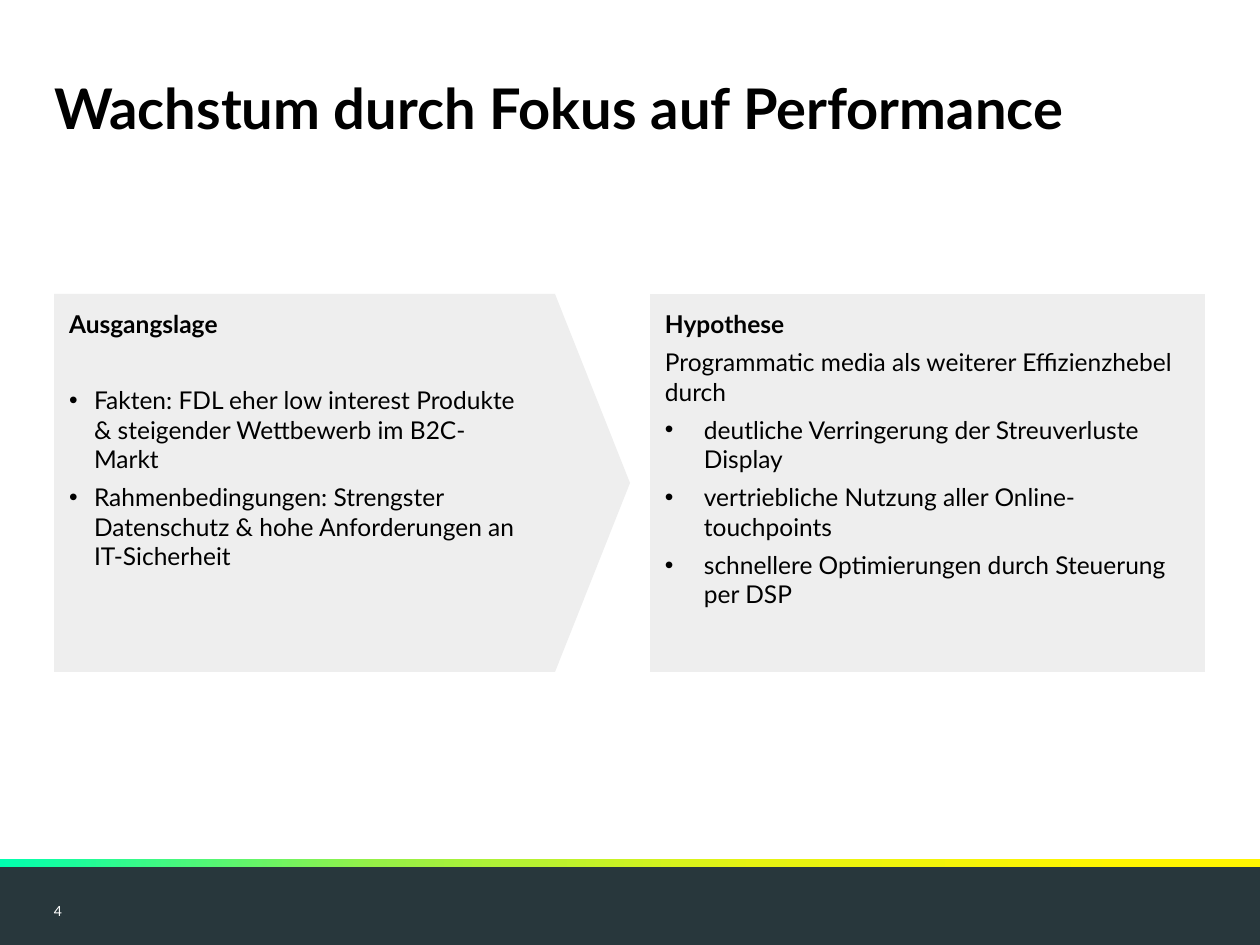
from lxml import etree
from pptx import Presentation
from pptx.dml.color import RGBColor
from pptx.enum.shapes import MSO_SHAPE
from pptx.enum.text import MSO_ANCHOR
from pptx.oxml.ns import qn
from pptx.util import Emu, Pt

RECTANGLE, PROCESS = MSO_SHAPE.RECTANGLE, MSO_SHAPE.FLOWCHART_PROCESS
TOP, MIDDLE = MSO_ANCHOR.TOP, MSO_ANCHOR.MIDDLE
EMU_PER_PX = 914400 / 126
FONT = "Lato"


def px(value):
    return Emu(round(value * EMU_PER_PX))


def color(hex_value):
    return RGBColor.from_string(hex_value)


deck = Presentation()
deck.slide_width, deck.slide_height = px(1260), px(945)
page = deck.slides.add_slide(deck.slide_layouts[6])

# Footer band with a gradient strip on its upper edge
footer = page.shapes.add_shape(RECTANGLE, px(0), px(864), px(1260), px(81))
footer.fill.solid()
footer.fill.fore_color.rgb = color("28373C")
strip = page.shapes.add_shape(RECTANGLE, px(0), px(859), px(1260), px(8))
strip.fill.gradient()
strip.fill.gradient_angle = 0
stops = strip._element.spPr.find(qn("a:gradFill")).find(qn("a:gsLst"))
for stop in list(stops):
    stops.remove(stop)
for percent, hex_value in [(0, "00FFAF"), (30, "96F046"), (60, "E6F311"), (90, "FFF500")]:
    stop = etree.SubElement(stops, qn("a:gs"), pos=str(percent * 1000))
    etree.SubElement(stop, qn("a:srgbClr"), val=hex_value)

# Title and page number
labels = [
    ("4", 54, 903, 149, 15, 8, False, "FFFFFF", MIDDLE),
    ("Wachstum durch Fokus auf Performance", 54, 74, 1150, 123, 32, True, "000000", TOP),
]
for text, left, top, width, height, size, bold, hex_value, anchor in labels:
    box = page.shapes.add_textbox(px(left), px(top), px(width), px(height))
    frame = box.text_frame
    frame.word_wrap = True
    frame.vertical_anchor = anchor
    frame.margin_left = frame.margin_right = frame.margin_top = frame.margin_bottom = 0
    frame.text = text
    font = frame.paragraphs[0].runs[0].font
    font.name, font.size, font.bold = FONT, Pt(size), bold
    font.color.rgb = color(hex_value)

# Hypothesis box and the arrow-shaped panel leading to it
hypothesis = page.shapes.add_shape(PROCESS, px(650), px(294), px(555), px(378))
outline = page.shapes.build_freeform(54, 294, scale=EMU_PER_PX)
outline.add_line_segments([(555, 294), (630, 483), (555, 672), (54, 672)], close=True)
situation = outline.convert_to_shape()

# Each panel: shape, right margin, bullet indent, (text, bold, bullet, space before)
panels = [
    (hypothesis, 15, 39, [
        ("Hypothese", True, False, 0),
        ("Programmatic media als weiterer Effizienzhebel durch", False, False, 5),
        ("deutliche Verringerung der Streuverluste Display", False, True, 5),
        ("vertriebliche Nutzung aller Online-touchpoints", False, True, 5),
        ("schnellere Optimierungen durch Steuerung per DSP", False, True, 5),
    ]),
    (situation, 100, 25, [
        ("Ausgangslage", True, False, 0),
        ("Fakten: FDL eher low interest Produkte & steigender Wettbewerb im B2C-Markt",
         False, True, 26.8),
        ("Rahmenbedingungen: Strengster Datenschutz & hohe Anforderungen an IT-Sicherheit",
         False, True, 5),
    ]),
]
for panel, right_margin, indent, entries in panels:
    panel.fill.solid()
    panel.fill.fore_color.rgb = color("EEEEEE")
    frame = panel.text_frame
    frame.word_wrap = True
    frame.vertical_anchor = TOP
    frame.margin_left = frame.margin_top = frame.margin_bottom = px(15)
    frame.margin_right = px(right_margin)
    frame.text = "\n".join(entry[0] for entry in entries)
    for para, (_, bold, bullet, space) in zip(frame.paragraphs, entries):
        para.alignment = 1
        para.space_before = Pt(space)
        if bullet:
            properties = para._p.get_or_add_pPr()
            properties.set("marL", str(px(indent)))
            properties.set("indent", str(-px(indent)))
            bullet_color = etree.SubElement(properties, qn("a:buClr"))
            etree.SubElement(bullet_color, qn("a:srgbClr"), val="000000")
            etree.SubElement(properties, qn("a:buFont"), typeface="Arial")
            etree.SubElement(properties, qn("a:buChar"), char="•")
        font = para.runs[0].font
        font.name, font.size, font.bold = FONT, Pt(14), bold
        font.color.rgb = color("000000")

for shape in (footer, strip, hypothesis, situation):
    shape.line.fill.background()
    shape.shadow.inherit = False

deck.save("out.pptx")
